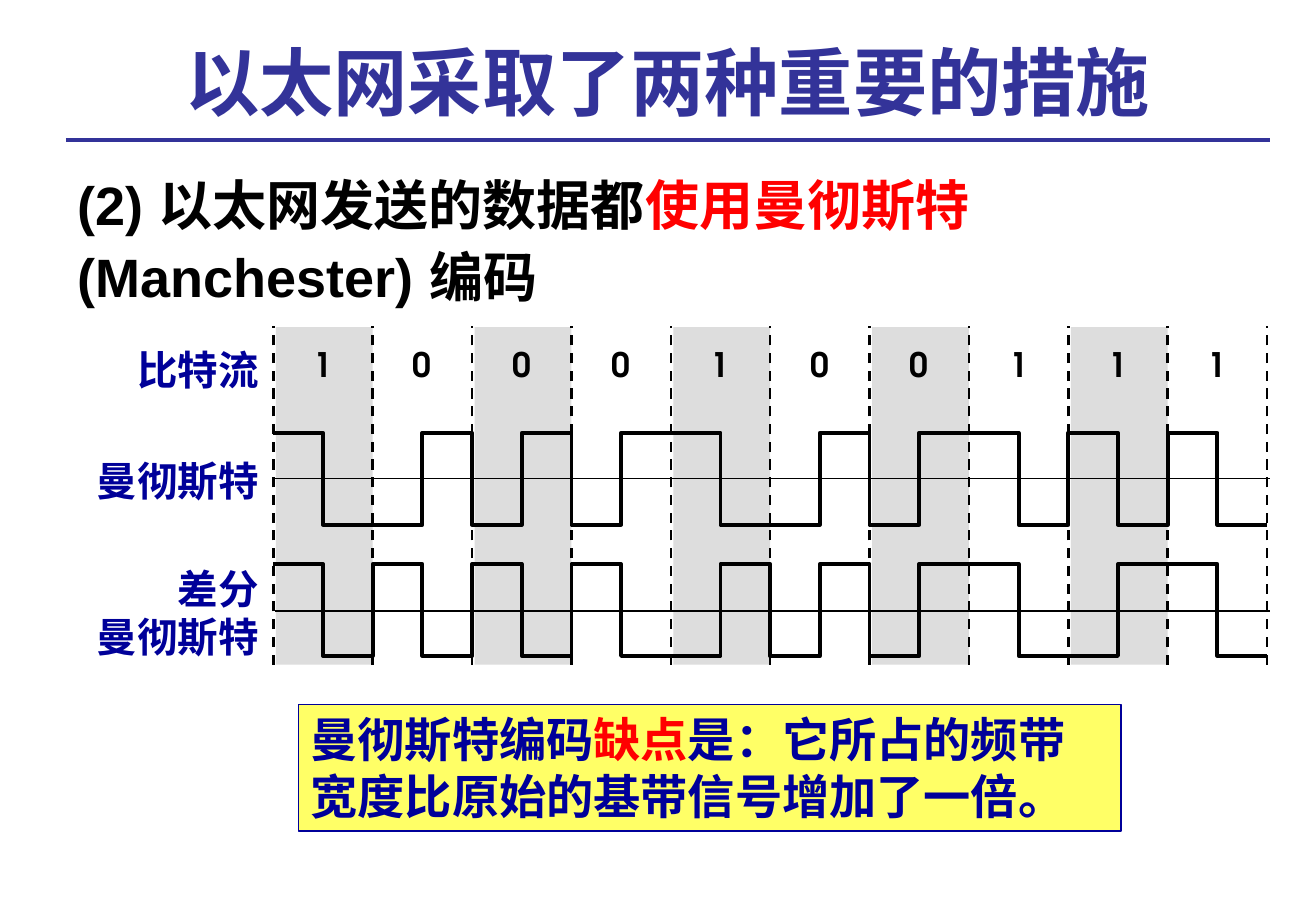
from pptx import Presentation
from pptx.dml.color import RGBColor
from pptx.enum.dml import MSO_LINE
from pptx.enum.shapes import MSO_CONNECTOR, MSO_SHAPE
from pptx.enum.text import MSO_ANCHOR, PP_ALIGN
from pptx.oxml.ns import qn
from pptx.util import Pt
from lxml.etree import SubElement

BLACK, RED, NAVY, INDIGO = "000000", "FF0000", "000099", "333399"
GREY, YELLOW = "DDDDDD", "FFFF66"

BITS = "1000100111"
LEFT, BIT_WIDTH = 162, 58.9
RIGHT = LEFT + BIT_WIDTH * len(BITS)


def color(value):
    return RGBColor.from_string(value)


class Page:
    """The current slide and the style of its elements."""

    font = "Arial"
    digit_font = "TeX Gyre Adventor"

    def __init__(self, deck):
        self.shapes = deck.slides.add_slide(deck.slide_layouts[6]).shapes

    def fill_text(self, box, paragraphs, size, align=PP_ALIGN.LEFT,
                  anchor=MSO_ANCHOR.TOP, font=None, spacing=None):
        frame = box.text_frame
        frame.word_wrap = True
        frame.vertical_anchor = anchor
        for index, spans in enumerate(paragraphs):
            para = frame.add_paragraph() if index else frame.paragraphs[0]
            para.alignment = align
            if spacing:
                para.line_spacing = spacing
            for words, ink in spans:
                span = para.add_run()
                span.text = words
                span.font.name = font or self.font
                span.font.size = Pt(size)
                span.font.bold = True
                span.font.color.rgb = color(ink)

    def text(self, left, top, width, height, paragraphs, size, **style):
        box = self.shapes.add_textbox(Pt(left), Pt(top), Pt(width), Pt(height))
        self.fill_text(box, paragraphs, size, **style)

    def rectangle(self, left, top, width, height, fill, outline=None):
        box = self.shapes.add_shape(MSO_SHAPE.RECTANGLE, Pt(left), Pt(top),
                                    Pt(width), Pt(height))
        box.shadow.inherit = False
        box.fill.solid()
        box.fill.fore_color.rgb = color(fill)
        if outline:
            box.line.color.rgb = color(outline)
            box.line.width = Pt(0.75)
        else:
            box.line.fill.background()
        return box

    def line(self, x1, y1, x2, y2, width, ink=BLACK, dash=None):
        line = self.shapes.add_connector(MSO_CONNECTOR.STRAIGHT, Pt(x1), Pt(y1),
                                         Pt(x2), Pt(y2))
        line.line.color.rgb = color(ink)
        line.line.width = Pt(width)
        if dash:
            line.line.dash_style = dash
        SubElement(line._element.spPr, qn("a:effectLst"))

    def wave(self, halves, high, low):
        """Draw a square wave from one level (True is high) per half bit."""
        points = []
        for index, level in enumerate(halves):
            y = high if level else low
            for step in (index, index + 1):
                points.append((Pt(LEFT + step * BIT_WIDTH / 2), Pt(y)))
        builder = self.shapes.build_freeform(*points[0], scale=1.0)
        builder.add_line_segments(points[1:], close=False)
        wave = builder.convert_to_shape()
        wave.shadow.inherit = False
        wave.fill.background()
        wave.line.color.rgb = color(BLACK)
        wave.line.width = Pt(2.25)


def manchester(bits):
    """A 1 falls and a 0 rises in the middle of its bit."""
    return [level for bit in bits for level in (bit == "1", bit == "0")]


def differential(bits):
    """A 0 also changes the level at the start of its bit."""
    level, halves = False, []
    for index, bit in enumerate(bits):
        if index == 0 or bit == "0":
            level = not level
        halves += [level, not level]
        level = not level
    return halves


def main():
    deck = Presentation()
    deck.slide_width, deck.slide_height = Pt(780), Pt(540)
    page = Page(deck)

    # Title and statement
    page.line(39, 83, 753, 83, 2.25, INDIGO)
    page.text(39, 15, 714, 63, [[("以太网采取了两种重要的措施", INDIGO)]], 44,
              align=PP_ALIGN.CENTER, anchor=MSO_ANCHOR.BOTTOM)
    page.text(39, 94.5, 714, 90,
              [[("(2) 以太网发送的数据都", BLACK), ("使用曼彻斯特 ", RED),
                ("(Manchester) 编码", BLACK)]], 32, spacing=1.1)

    # Bit columns: shaded bands, dashed borders and digits
    for index in range(0, len(BITS), 2):
        page.rectangle(LEFT + index * BIT_WIDTH + 1.5, 194, 57.4, 200, GREY)
    for index in range(len(BITS) + 1):
        x = LEFT + index * BIT_WIDTH
        page.line(x, 394, x, 193, 1.5, dash=MSO_LINE.DASH)
    for index, bit in enumerate(BITS):
        page.text(LEFT + index * BIT_WIDTH, 200, BIT_WIDTH, 31, [[(bit, BLACK)]],
                  20, align=PP_ALIGN.CENTER, font=page.digit_font)

    # Row labels
    for top, height, rows in ((201, 36, ["比特流"]), (267, 36, ["曼彻斯特"]),
                              (330.5, 65.5, ["差分", "曼彻斯特"])):
        page.text(40, top, 120.5, height, [[(row, NAVY)] for row in rows], 24,
                  align=PP_ALIGN.RIGHT)

    # Signals and their zero lines
    page.wave(manchester(BITS), 256.5, 311)
    page.wave(differential(BITS), 334.3, 388.8)
    for y in (283.7, 362.2):
        page.line(LEFT + 1, y, RIGHT + 2, y, 1)

    # Drawback
    note = page.rectangle(177, 417.6, 487.5, 75, YELLOW, NAVY)
    page.fill_text(note, [[("曼彻斯特编码", NAVY), ("缺点", RED),
                           ("是：它所占的频带宽度比原始的基带信号增加了一倍。", NAVY)]],
                   28)

    deck.save("out.pptx")


if __name__ == "__main__":
    main()
